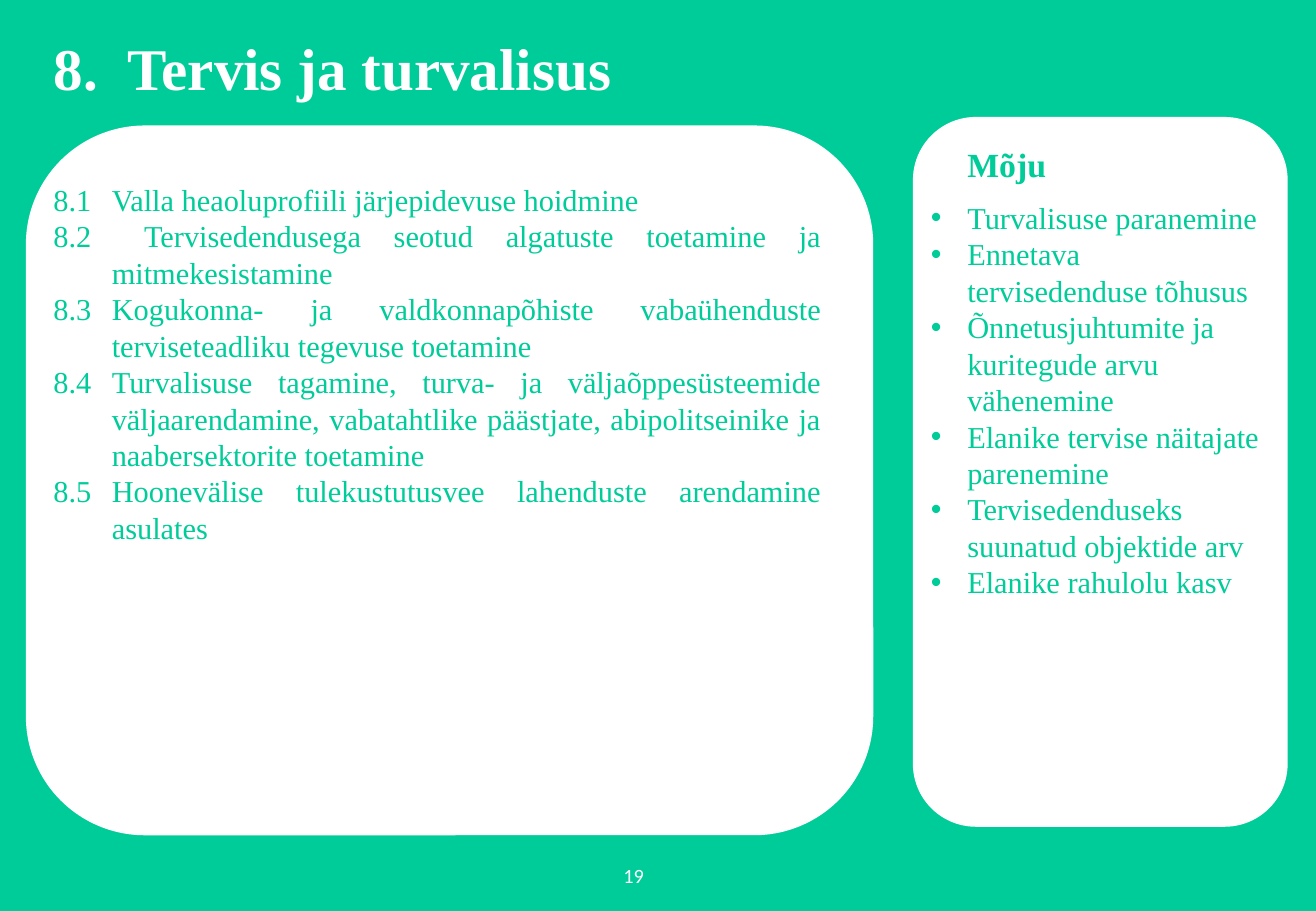
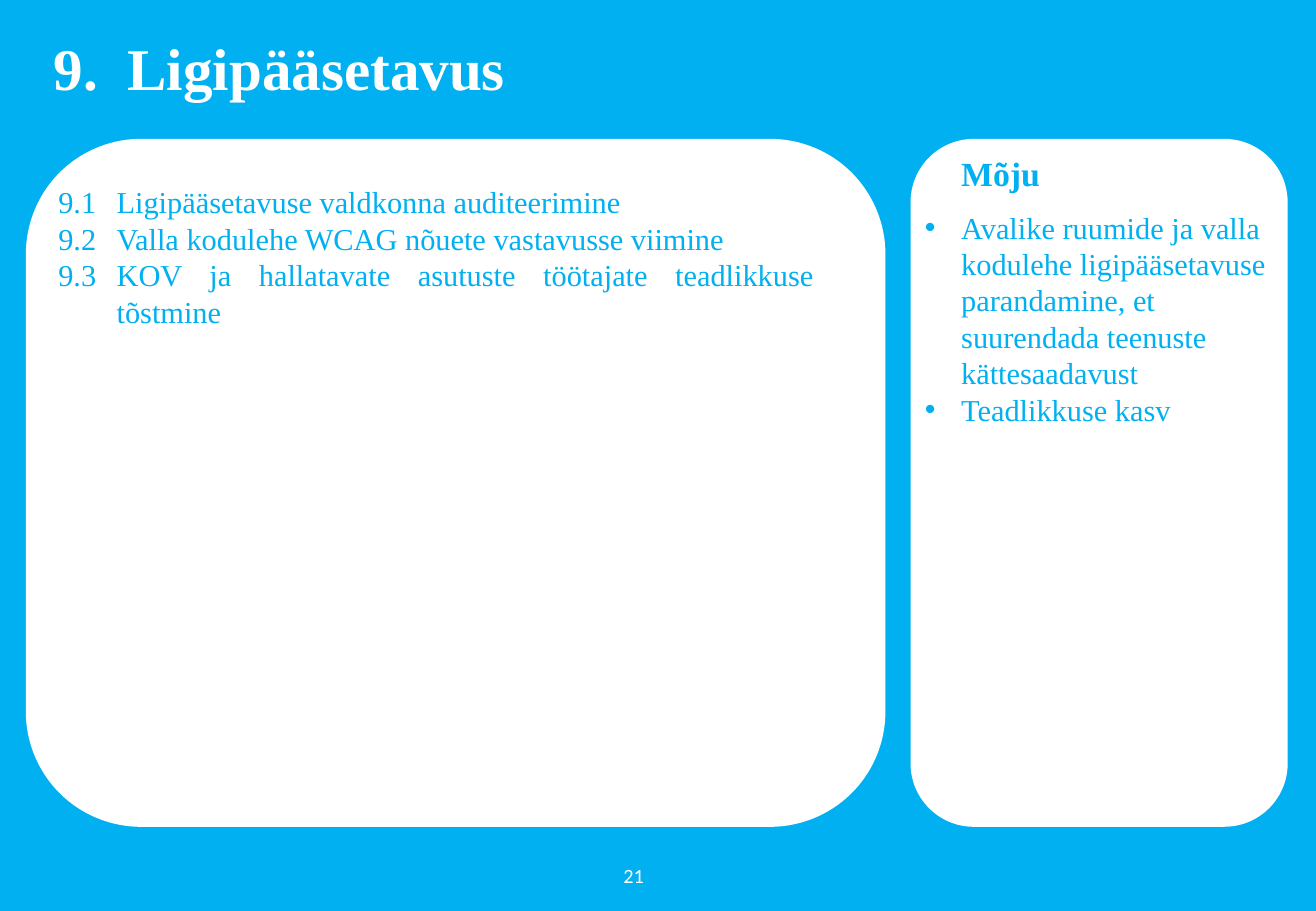
import pptx
import pptx.dml.color
import pptx.enum.shapes
import pptx.enum.text
import pptx.util
from lxml import etree

ALIGN = pptx.enum.text.PP_ALIGN
ANCHOR = pptx.enum.text.MSO_ANCHOR
INCH = pptx.util.Inches
WIDTH, HEIGHT = 10.83, 7.5
WHITE = "FFFFFF"
SERIF, SANS = "Times New Roman", "Calibri"
TITLE_AREA = (0.39, 0.29, 9.85, 0.6)
NUMBER_AREA = (5.07, 7.06, 0.29, 0.29)
IMPACT_HEADING = "Mõju"

TOPICS = [
    {
        "number": 8, "title": "Tervis ja turvalisus", "page": "19", "color": "00CC99",
        "actions": [
            "Valla heaoluprofiili järjepidevuse hoidmine",
            " Tervisedendusega seotud algatuste toetamine ja mitmekesistamine",
            "Kogukonna- ja valdkonnapõhiste vabaühenduste terviseteadliku tegevuse toetamine",
            "Turvalisuse tagamine, turva- ja väljaõppesüsteemide väljaarendamine, "
            "vabatahtlike päästjate, abipolitseinike ja naabersektorite toetamine",
            "Hoonevälise tulekustutusvee lahenduste arendamine asulates",
        ],
        "impacts": [
            "Turvalisuse paranemine",
            "Ennetava tervisedenduse tõhusus",
            "Õnnetusjuhtumite ja kuritegude arvu vähenemine",
            "Elanike tervise näitajate parenemine",
            "Tervisedenduseks suunatud objektide arv",
            "Elanike rahulolu kasv",
        ],
        "panels": [(0.22, 1.04, 6.96, 5.83), (7.52, 0.97, 3.07, 5.83)],
        "actions_area": (0.39, 1.44, 6.42, 3.13),
        "impacts_area": (7.52, 1.13, 2.92, 4.19),
    },
    {
        "number": 9, "title": "Ligipääsetavus", "page": "21", "color": "00B0F0",
        "actions": [
            "Ligipääsetavuse valdkonna auditeerimine",
            "Valla kodulehe WCAG nõuete vastavusse viimine",
            "KOV ja hallatavate asutuste töötajate teadlikkuse tõstmine",
        ],
        "impacts": [
            "Avalike ruumide ja valla kodulehe ligipääsetavuse parandamine, "
            "et suurendada teenuste kättesaadavust",
            "Teadlikkuse kasv",
        ],
        "panels": [(0.22, 1.15, 7.06, 5.65), (7.5, 1.15, 3.09, 5.65)],
        "actions_area": (0.43, 1.46, 6.32, 1.31),
        "impacts_area": (7.47, 1.21, 3.11, 2.68),
    },
]


def rgb(value):
    return pptx.dml.color.RGBColor.from_string(value)


def place(shape, area, anchor=ANCHOR.TOP, wrap=True):
    shape.left, shape.top, shape.width, shape.height = map(INCH, area)
    frame = shape.text_frame
    frame.margin_left = frame.margin_right = INCH(0.05)
    frame.margin_top = frame.margin_bottom = INCH(0.05)
    frame.auto_size = pptx.enum.text.MSO_AUTO_SIZE.NONE
    frame.vertical_anchor = anchor
    frame.word_wrap = wrap
    return frame


def write(paragraph, text, color, size=18, font=SERIF, bold=False, align=ALIGN.LEFT,
          margin=0, hanging=0, bullet=None, spacing=1.0, after=0):
    run = paragraph.add_run()
    run.text = text
    run.font.name, run.font.size, run.font.bold = font, pptx.util.Pt(size), bold
    run.font.color.rgb = rgb(color)
    paragraph.alignment = align
    paragraph.line_spacing = spacing
    paragraph.space_before = pptx.util.Pt(0)
    paragraph.space_after = pptx.util.Pt(after)
    properties = paragraph._p.get_or_add_pPr()
    properties.set("marL", str(INCH(margin)))
    properties.set("indent", str(-INCH(hanging)))
    namespace = "{http://schemas.openxmlformats.org/drawingml/2006/main}"
    if bullet:
        etree.SubElement(properties, namespace + "buFont").set("typeface", "Arial")
        etree.SubElement(properties, namespace + "buChar").set("char", bullet)
    else:
        etree.SubElement(properties, namespace + "buNone")


def add_panel(slide, area, depth):
    panel = slide.shapes.add_shape(
        pptx.enum.shapes.MSO_SHAPE.ROUNDED_RECTANGLE, *map(INCH, area))
    panel.shadow.inherit = False
    panel.fill.solid()
    panel.fill.fore_color.rgb = rgb(WHITE)
    panel.line.color.rgb = rgb(WHITE)
    panel.line.width = pptx.util.Pt(1)
    slide.shapes._spTree.insert(2 + depth, panel._element)


def build_topic(deck, topic):
    slide = deck.slides.add_slide(deck.slide_layouts.get_by_name("Two Content"))
    color, number = topic["color"], topic["number"]
    slide.background.fill.solid()
    slide.background.fill.fore_color.rgb = rgb(color)
    for depth, area in enumerate(topic["panels"]):
        add_panel(slide, area, depth)

    title = place(slide.shapes.title, TITLE_AREA, ANCHOR.MIDDLE)
    write(title.paragraphs[0], f"{number}.\t{topic['title']}", WHITE, size=35,
          bold=True, margin=0.61, hanging=0.61, spacing=0.9)

    actions = place(slide.placeholders[1], topic["actions_area"])
    for index, action in enumerate(topic["actions"], 1):
        paragraph = actions.paragraphs[0] if index == 1 else actions.add_paragraph()
        write(paragraph, f"{number}.{index}\t{action}", color,
              align=ALIGN.JUSTIFY, margin=0.48, hanging=0.48)

    impacts = place(slide.placeholders[2], topic["impacts_area"])
    write(impacts.paragraphs[0], IMPACT_HEADING, color, size=20, bold=True,
          margin=0.39, after=9)
    for impact in topic["impacts"]:
        write(impacts.add_paragraph(), impact, color, margin=0.39, hanging=0.3, bullet="•")

    page = place(slide.shapes.add_textbox(0, 0, 0, 0), NUMBER_AREA, ANCHOR.MIDDLE, wrap=False)
    write(page.paragraphs[0], topic["page"], WHITE, size=12, font=SANS, align=ALIGN.CENTER)


def main():
    deck = pptx.Presentation()
    deck.slide_width, deck.slide_height = INCH(WIDTH), INCH(HEIGHT)
    for topic in TOPICS:
        build_topic(deck, topic)
    deck.save("out.pptx")


if __name__ == "__main__":
    main()
